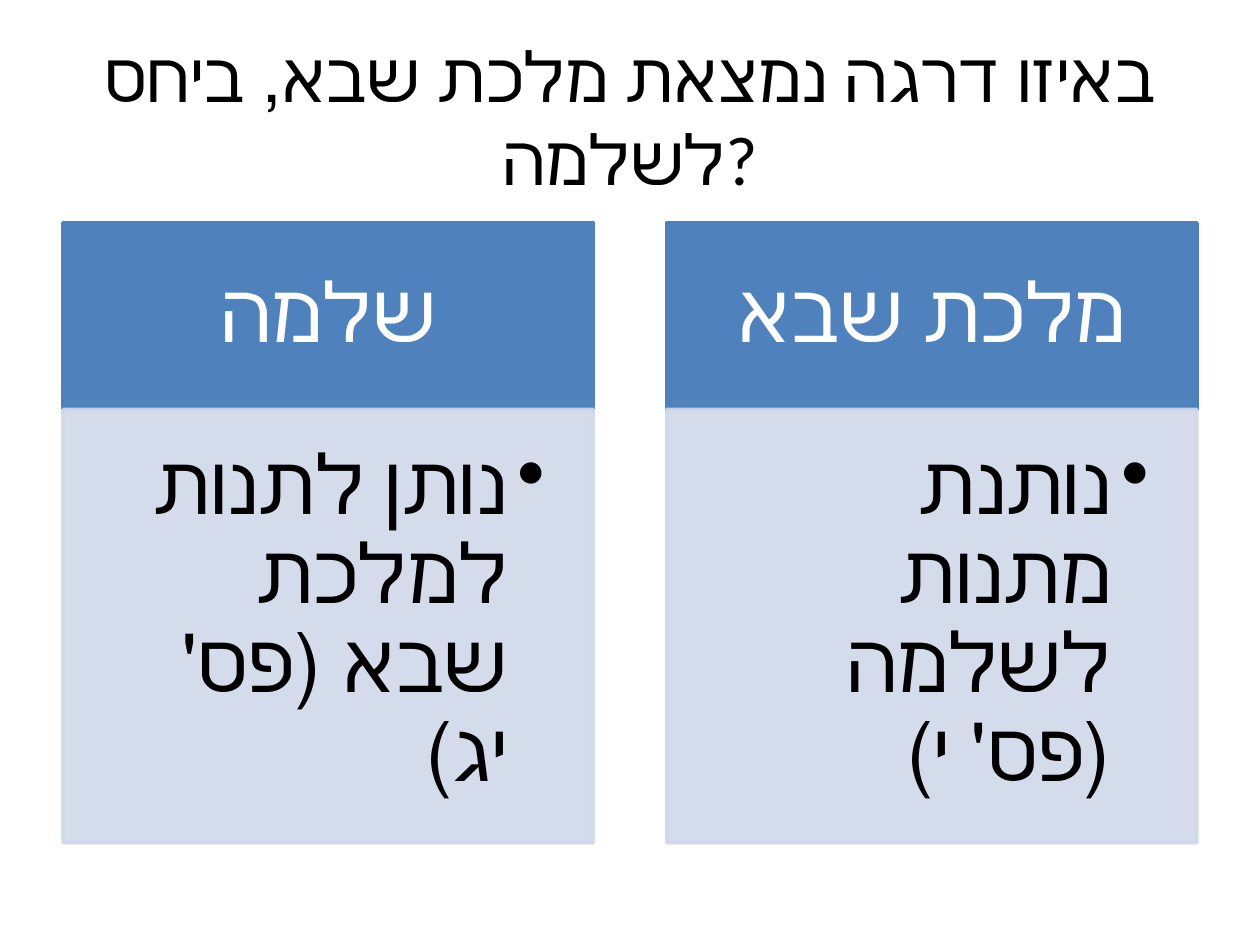
from lxml.etree import SubElement
from pptx import Presentation
from pptx.dml.color import RGBColor
from pptx.enum.shapes import MSO_SHAPE
from pptx.enum.text import MSO_ANCHOR, PP_ALIGN
from pptx.oxml.ns import qn
from pptx.util import Inches, Pt

COLORS = {"header": "4F81BD", "body": "D0D8E8", "white": "FFFFFF", "black": "000000"}
COLUMNS = [
    ("שלמה", "נותן לתנות למלכת שבא (פס' יג)"),
    ("מלכת שבא", "נותנת מתנות לשלמה (פס' י)"),
]
LEFT, WIDTH, STEP = 0.5, 4.21, 4.79
PARTS = [
    {"top": 1.77, "height": 1.48, "fill": "header", "font": "white",
     "align": PP_ALIGN.CENTER, "anchor": MSO_ANCHOR.MIDDLE,
     "margins": (0.37, 0.21, 0.37, 0.21), "alpha": None, "bullet": False},
    {"top": 3.25, "height": 3.44, "fill": "body", "font": "black",
     "align": PP_ALIGN.RIGHT, "anchor": MSO_ANCHOR.TOP,
     "margins": (0.27, 0.27, 0.37, 0.41), "alpha": "90000", "bullet": True},
]


def write(frame, text, size, color, align):
    para = frame.paragraphs[0]
    para.alignment = align
    span = para.add_run()
    span.text = text
    for name, value in {"name": "Calibri", "size": Pt(size)}.items():
        setattr(span.font, name, value)
    span.font.color.rgb = RGBColor.from_string(COLORS[color])
    return para


deck = Presentation()
deck.slide_width, deck.slide_height = Inches(10), Inches(7.5)
page = deck.slides.add_slide(deck.slide_layouts[5])

title = page.shapes.title
title.left, title.top = Inches(0.5), Inches(0.3)
title.width, title.height = Inches(9), Inches(1.25)
title.text_frame.vertical_anchor = MSO_ANCHOR.MIDDLE
write(title.text_frame, "באיזו דרגה נמצאת מלכת שבא, ביחס לשלמה?", 39.6, "black", PP_ALIGN.CENTER)

for index, texts in enumerate(COLUMNS):
    for part, text in zip(PARTS, texts):
        box = page.shapes.add_shape(
            MSO_SHAPE.RECTANGLE, Inches(LEFT + index * STEP), Inches(part["top"]),
            Inches(WIDTH), Inches(part["height"]))
        box.shadow.inherit = False
        box.fill.solid()
        box.line.width = Pt(2)
        for paint in (box.fill.fore_color, box.line.color):
            paint.rgb = RGBColor.from_string(COLORS[part["fill"]])
        if part["alpha"]:
            for color in box._element.spPr.iter(qn("a:srgbClr")):
                SubElement(color, qn("a:alpha"), val=part["alpha"])

        frame = box.text_frame
        frame.word_wrap = True
        frame.vertical_anchor = part["anchor"]
        for side, margin in zip(("left", "top", "right", "bottom"), part["margins"]):
            setattr(frame, f"margin_{side}", Inches(margin))
        para = write(frame, text, 47, part["font"], part["align"])
        para.line_spacing = 0.9
        if part["bullet"]:
            props = para._p.get_or_add_pPr()
            for name, value in {"marL": Inches(0.31), "indent": Inches(-0.31), "rtl": 1}.items():
                props.set(name, str(value))
            SubElement(props, qn("a:buChar"), char="•")

deck.save("out.pptx")
